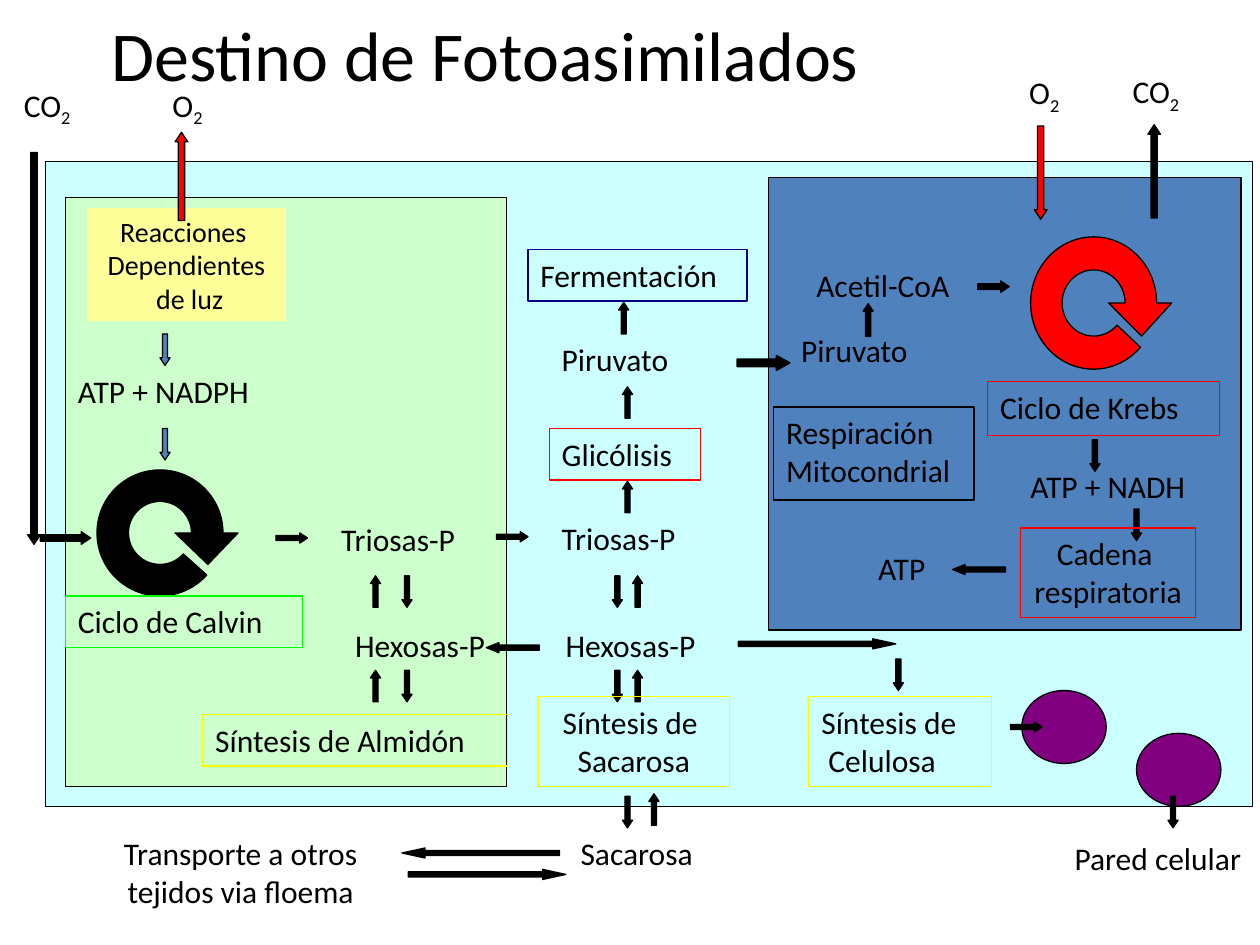
from dataclasses import dataclass
from math import cos, radians, sin, tan

from lxml import etree
from pptx import Presentation
from pptx.dml.color import RGBColor
from pptx.enum.shapes import MSO_SHAPE
from pptx.enum.text import MSO_ANCHOR, MSO_AUTO_SIZE, PP_ALIGN
from pptx.oxml.ns import qn
from pptx.slide import Slide
from pptx.util import Inches, Pt

RECTANGLE, OVAL = MSO_SHAPE.RECTANGLE, MSO_SHAPE.OVAL
ARROWS = {"up": (MSO_SHAPE.DOWN_ARROW, 180), "down": (MSO_SHAPE.DOWN_ARROW, 0),
          "left": (MSO_SHAPE.LEFT_ARROW, 0), "right": (MSO_SHAPE.RIGHT_ARROW, 0)}
LEFT, CENTER = PP_ALIGN.LEFT, PP_ALIGN.CENTER
TOP, MIDDLE = MSO_ANCHOR.TOP, MSO_ANCHOR.MIDDLE
FIT_SHAPE, NO_FIT = MSO_AUTO_SIZE.SHAPE_TO_FIT_TEXT, MSO_AUTO_SIZE.NONE
FONT = "Calibri"
COLORS = {
    "black": "000000", "red": "FF0000", "yellow": "FFFF00", "navy": "000080",
    "lime": "00FF00", "blue": "4F81BD", "purple": "800080",
    "cell": "CCFFFF", "chloroplast": "CCFFCC", "light": "FFFF99",
}


def rgb(name):
    """Return the named colour."""
    return RGBColor.from_string(COLORS[name])


def add_run(paragraph, text, size):
    """Add one formatted run and return it."""
    run = paragraph.add_run()
    run.text = text
    run.font.name = FONT
    run.font.size = Pt(size)
    run.font.color.rgb = rgb("black")
    return run


def paint(shape, fill=None, line=None):
    """Give a shape its fill and thin outline, or none."""
    shape.shadow.inherit = False
    if fill:
        shape.fill.solid()
        shape.fill.fore_color.rgb = rgb(fill)
    else:
        shape.fill.background()
    if line:
        shape.line.color.rgb = rgb(line)
        shape.line.width = Pt(0.75)
    else:
        shape.line.fill.background()


@dataclass
class Region:
    """A box on the slide whose parts are placed from its top left corner."""
    slide: Slide
    left: float
    top: float
    width: float
    height: float

    def place(self, x, y, width, height):
        """Turn a box inside the region into slide lengths."""
        return [Inches(value) for value in (self.left + x, self.top + y, width, height)]

    def shape(self, kind, x, y, width, height, fill=None, line="black"):
        """Add a painted preset shape."""
        shape = self.slide.shapes.add_shape(kind, *self.place(x, y, width, height))
        paint(shape, fill, line)
        return shape

    def background(self, fill):
        """Fill the whole region."""
        self.shape(RECTANGLE, 0, 0, self.width, self.height, fill)

    def arrow(self, direction, x, y, length=0.25, thickness=0.08, fill="black", head=0.75):
        """Add a block arrow that points in the given direction."""
        upright = direction in ("up", "down")
        size = (thickness, length) if upright else (length, thickness)
        kind, rotation = ARROWS[direction]
        shape = self.shape(kind, x, y, *size, fill)
        shape.rotation = rotation
        shape.adjustments[0] = 0.5
        shape.adjustments[1] = head

    def exchange(self, up, down, y):
        """Add a pair of opposite vertical arrows."""
        self.arrow("up", up, y)
        self.arrow("down", down, y)

    def label(self, text, x, y, width, height=0.4, line=None, fill=None,
              align=LEFT, size=18, subscript="", wrap=False):
        """Add a label, framed or filled on request."""
        if line or fill:
            shape = self.shape(RECTANGLE, x, y, width, height, fill, line)
        else:
            shape = self.slide.shapes.add_textbox(*self.place(x, y, width, height))
        frame = shape.text_frame
        frame.word_wrap = wrap
        frame.auto_size = FIT_SHAPE
        frame.vertical_anchor = TOP
        for index, content in enumerate(text.split("\n")):
            paragraph = frame.add_paragraph() if index else frame.paragraphs[0]
            paragraph.alignment = align
            add_run(paragraph, content, size)
        if subscript:
            run = add_run(paragraph, subscript, size)
            run._r.get_or_add_rPr().set("baseline", "-25000")

    def cycle(self, x, y, width, height, fill):
        """Add an open ring with curved edges that ends in an arrowhead."""
        center_x, center_y = self.left + x + width / 2, self.top + y + height / 2

        def point(across, down):
            return Inches(center_x + across * width), Inches(center_y + down * height)

        def on_ring(radius, angle, pull=0):
            turn = radians(angle)
            return point(radius * (cos(turn) - pull * sin(turn)),
                         radius * (sin(turn) + pull * cos(turn)))

        inner = [(0.25, angle) for angle in (360, 270, 180, 90, 42)]
        outer = [(0.5, angle) for angle in (42, 90, 180, 270, 360)]
        ring = inner + outer
        anchors = [on_ring(*stop) for stop in ring]
        head = [point(0.62, 0), point(0.38, 0.25), point(0.12, 0), anchors[0]]
        builder = self.slide.shapes.build_freeform(*anchors[0])
        builder.add_line_segments(anchors[1:] + head, close=True)
        shape = builder.convert_to_shape()
        outline = next(shape._element.iter(qn("a:path")))
        edges = outline.findall(qn("a:lnTo"))
        for edge, (radius, start), (end_radius, end) in zip(edges, ring, ring[1:]):
            if radius == end_radius:
                pull = 4 / 3 * tan(radians(end - start) / 4)
                edge.tag = qn("a:cubicBezTo")
                controls = (on_ring(radius, start, pull), on_ring(radius, end, -pull))
                for index, (across, down) in enumerate(controls):
                    control = etree.Element(qn("a:pt"), x=str(across - shape.left),
                                            y=str(down - shape.top))
                    edge.insert(index, control)
        shape.width = Inches(width)
        outline.set("w", str(shape.width))
        paint(shape, fill, "black")


def add_title(slide, left, top, width, height):
    """Place and format the title."""
    title = slide.shapes.title
    title.left, title.top, title.width, title.height = map(Inches, (left, top, width, height))
    frame = title.text_frame
    frame.auto_size = NO_FIT
    frame.vertical_anchor = MIDDLE
    frame.paragraphs[0].alignment = CENTER
    add_run(frame.paragraphs[0], "Destino de Fotoasimilados", 40)


def add_chloroplast(region):
    """Draw light reactions, Calvin cycle and starch synthesis."""
    region.background("chloroplast")
    region.label("CO", -0.43, -0.94, 0.59, subscript="2")
    region.arrow("down", -0.3, -0.36, 3.11, 0.1)
    region.arrow("right", -0.2, 2.65, 0.4, 0.1)
    region.label("Reacciones \nDependientes\n de luz", 0.17, 0.08, 1.58, 0.9,
                 fill="light", align=CENTER, size=16, wrap=True)
    region.label("O", 0.75, -0.94, 0.45, subscript="2")
    region.arrow("up", 0.87, -0.52, 0.7, 0.1, "red")
    for y in (1.08, 1.83):
        region.arrow("down", 0.75, y, fill="blue")
    region.label("ATP + NADPH", 0, 1.33, 1.57)
    region.cycle(0.25, 2.16, 1, 1, "black")
    region.label("Ciclo de Calvin", 0, 3.16, 1.88, 0.41, "lime")
    region.arrow("right", 1.67, 2.66)
    region.label("Triosas-P", 2.09, 2.51, 1.27)
    region.label("Hexosas-P", 2.2, 3.35, 1.42)
    for y in (3, 3.75):
        region.exchange(2.42, 2.67, y)
    region.label("Síntesis de Almidón", 1.09, 4.1, 2.42, 0.41, "yellow")
    region.arrow("left", 3.34, 3.53, 0.42, head=1.25)


def add_wall_synthesis(region):
    """Draw cellulose synthesis and its way to the cell wall."""
    region.arrow("right", 0, 0, 1.25, head=2.29)
    region.arrow("down", 1.23, 0.16)
    region.label("Síntesis de\n Celulosa", 0.56, 0.46, 1.45, 0.71, "yellow")
    for x, y in ((2.25, 0.41), (3.16, 0.75)):
        region.shape(OVAL, x, y, 0.67, 0.58, "purple")
    region.arrow("right", 2.16, 0.66)
    region.arrow("down", 3.41, 1.25)
    region.label("Pared celular", 2.57, 1.54, 1.67)


def add_cytosol(region):
    """Draw fermentation, glycolysis and sucrose synthesis."""
    region.label("Fermentación", 0, 0, 1.74, 0.41, "navy")
    region.label("Piruvato", 0.17, 0.67, 1.12)
    region.label("Glicólisis", 0.17, 1.42, 1.2, 0.41, "red")
    for x, y in ((0.72, 0.42), (0.75, 1.09), (0.75, 1.84)):
        region.arrow("up", x, y)
    region.arrow("right", -0.25, 2.24)
    region.label("Triosas-P", 0.17, 2.09, 1.27)
    region.label("Hexosas-P", 0.2, 2.94, 1.42)
    for y in (2.59, 3.34):
        region.exchange(0.83, 0.67, y)
    region.label("Síntesis de \nSacarosa", 0.08, 3.55, 1.52, 0.71, "yellow", align=CENTER)


def add_transport(region):
    """Draw sucrose transport to other tissues."""
    region.arrow("down", 4.22, 0.02)
    region.arrow("up", 4.43, 0)
    region.label(" Sacarosa", 3.64, 0.27, 1.33, align=CENTER)
    region.arrow("left", 2.47, 0.43, 1.25, head=2.29)
    region.arrow("right", 2.52, 0.6, 1.25, head=2.29)
    region.label(" Transporte a otros \ntejidos via floema", 0, 0.27, 2.38, 0.7, align=CENTER)


def add_mitochondrion(region):
    """Draw Krebs cycle and respiratory chain."""
    region.background("blue")
    region.arrow("right", -0.25, 1.41, 0.42, 0.12, head=0.9)
    region.label("Piruvato", 0.16, 1.17, 1.12, 0.42)
    region.arrow("up", 0.75, 1, 0.26)
    region.label("Acetil-CoA", 0.28, 0.65, 1.38, 0.42)
    region.arrow("right", 1.66, 0.82, thickness=0.09)
    region.cycle(2.08, 0.47, 1, 1.05, "red")
    region.label("Ciclo de Krebs", 1.74, 1.62, 1.84, 0.43, "red")
    region.label("Respiración\nMitocondrial", 0.04, 1.82, 1.59, 0.74, "black")
    region.label("O", 1.97, -0.88, 0.45, 0.42, subscript="2")
    region.arrow("down", 2.11, -0.41, 0.74, 0.1, "red")
    region.label("CO", 2.79, -0.89, 0.59, 0.42, subscript="2")
    region.arrow("up", 3.01, -0.42, 0.74, 0.1)
    region.arrow("down", 2.55, 2.08)
    region.label("ATP + NADH", 1.98, 2.25, 1.44)
    region.arrow("down", 2.88, 2.63)
    region.label("Cadena \nrespiratoria", 2, 2.78, 1.39, 0.71, "red", align=CENTER)
    region.arrow("left", 1.46, 3.07, 0.42, head=1.25)
    region.label("ATP", 0.77, 2.9, 0.58)


def main():
    """Build the slide and save it."""
    presentation = Presentation()
    presentation.slide_width, presentation.slide_height = Inches(10), Inches(7.5)
    slide = presentation.slides.add_slide(presentation.slide_layouts[5])
    add_title(slide, -0.4, -0.2, 8.5, 1.25)
    Region(slide, 0.36, 1.28, 9.58, 5.12).background("cell")
    add_chloroplast(Region(slide, 0.52, 1.57, 3.5, 4.67))
    add_wall_synthesis(Region(slide, 5.86, 5.07, 4.24, 1.94))
    add_cytosol(Region(slide, 4.19, 1.98, 1.74, 4.26))
    add_transport(Region(slide, 0.72, 6.3, 4.97, 0.97))
    add_mitochondrion(Region(slide, 6.1, 1.41, 3.75, 3.59))
    presentation.save("out.pptx")


if __name__ == "__main__":
    main()
